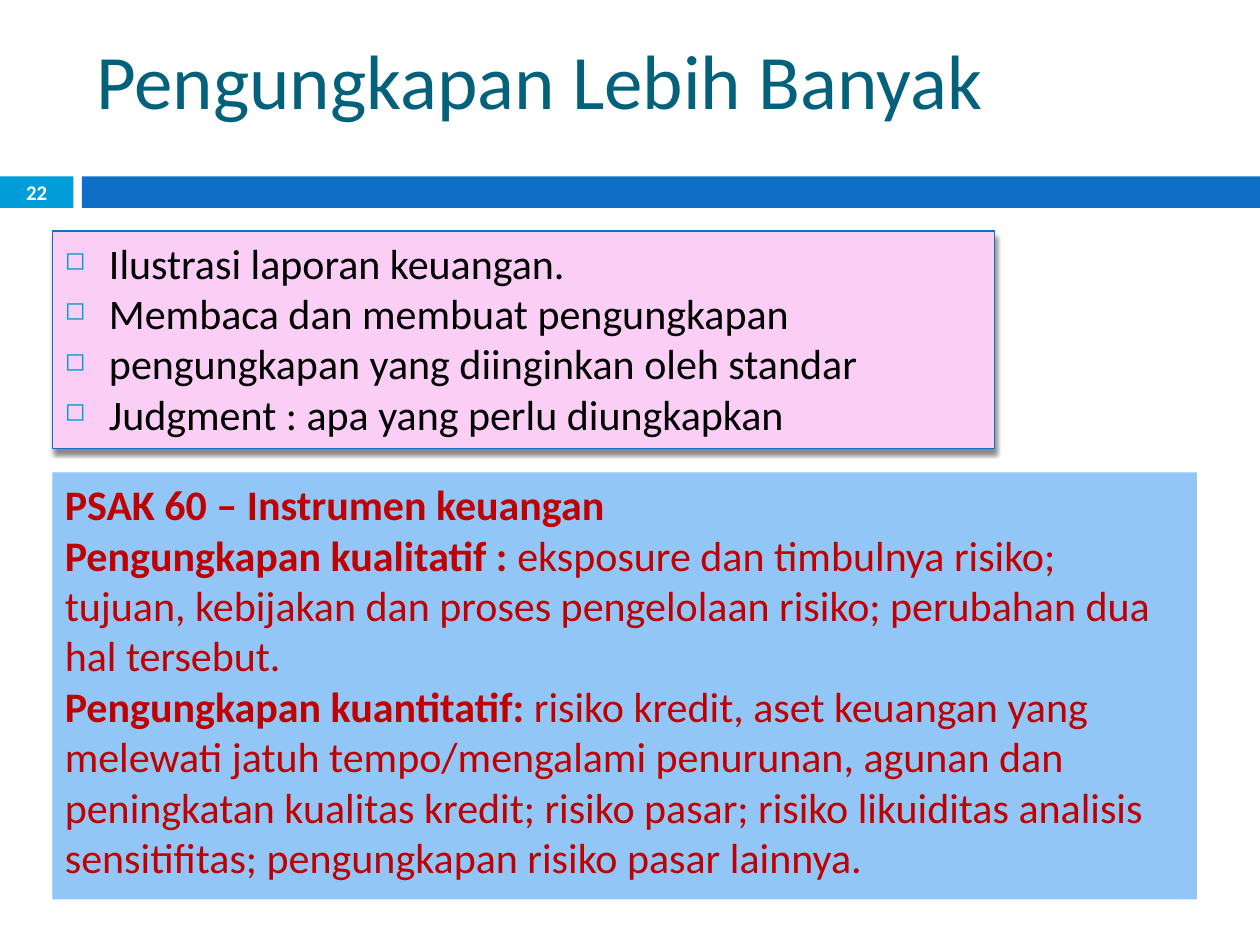
import lxml.etree
import pptx
import pptx.dml.color
import pptx.enum.shapes
import pptx.enum.text
import pptx.oxml.ns
import pptx.util

Pt = pptx.util.Pt
RGBColor = pptx.dml.color.RGBColor
ALIGN = pptx.enum.text.PP_ALIGN
ANCHOR = pptx.enum.text.MSO_ANCHOR
qn = pptx.oxml.ns.qn

CYAN = RGBColor(0x00, 0x9D, 0xD9)
BLUE = RGBColor(0x0F, 0x6F, 0xC6)
TEAL = RGBColor(0x04, 0x61, 0x7B)
PINK = RGBColor(0xFA, 0xCE, 0xF5)
LIGHT_BLUE = RGBColor(0x91, 0xC6, 0xF7)
DARK_RED = RGBColor(0xC0, 0x00, 0x00)
BLACK = RGBColor(0x00, 0x00, 0x00)
WHITE = RGBColor(0xFF, 0xFF, 0xFF)

REQUIREMENTS = [
    "Ilustrasi laporan keuangan.",
    "Membaca dan membuat pengungkapan",
    "pengungkapan yang diinginkan oleh standar",
    "Judgment : apa yang perlu diungkapkan",
]
# Bold lead, then regular text
STANDARD = [
    ("PSAK 60 – Instrumen keuangan", ""),
    ("Pengungkapan kualitatif : ",
     "eksposure dan timbulnya risiko; tujuan, kebijakan dan proses "
     "pengelolaan risiko; perubahan dua hal tersebut."),
    ("Pengungkapan kuantitatif: ",
     "risiko kredit, aset keuangan yang melewati jatuh tempo/mengalami "
     "penurunan, agunan dan peningkatan kualitas kredit; risiko pasar; "
     "risiko likuiditas analisis sensitifitas; pengungkapan risiko pasar lainnya."),
]

deck = pptx.Presentation()
deck.slide_width, deck.slide_height = Pt(720), Pt(540)
slide = deck.slides.add_slide(deck.slide_layouts[6])


def add_box(left, top, width, height, fill=None, anchor=ANCHOR.TOP):
    """Add a rectangle with wrapped text and no outline; no fill means clear."""
    box = slide.shapes.add_shape(
        pptx.enum.shapes.MSO_SHAPE.RECTANGLE,
        Pt(left), Pt(top), Pt(width), Pt(height))
    box.shadow.inherit = False
    box.line.fill.background()
    if fill is None:
        box.fill.background()
    else:
        box.fill.solid()
        box.fill.fore_color.rgb = fill
    box.text_frame.word_wrap = True
    box.text_frame.vertical_anchor = anchor
    return box


def style(paragraph, size, color, bold=None, align=ALIGN.LEFT):
    paragraph.alignment = align
    paragraph.font.name = "Calibri"
    paragraph.font.size = Pt(size)
    paragraph.font.color.rgb = color
    paragraph.font.bold = bold


# Header band
add_box(0, 100.8, 42, 18, CYAN)
add_box(46.8, 100.8, 673.2, 18, BLUE)

title = add_box(48, 6, 642, 78, anchor=ANCHOR.MIDDLE).text_frame.paragraphs[0]
title.text = "Pengungkapan Lebih Banyak"
style(title, 44, TEAL)

page_number = add_box(0, 100, 42, 19.5, anchor=ANCHOR.MIDDLE).text_frame.paragraphs[0]
page_number.text = "22"
style(page_number, 11.9, WHITE, bold=True, align=ALIGN.CENTER)

# Disclosure requirements
requirements = add_box(30, 132, 538.5, 124.5, PINK)
requirements.line.color.rgb = BLUE
requirements.line.width = Pt(0.79)
effects = requirements._element.spPr.find(qn("a:effectLst"))
shadow = lxml.etree.SubElement(
    effects, qn("a:outerShdw"), blurRad=str(Pt(3)), dist=str(Pt(2.4)),
    dir="5400000", algn="ctr", rotWithShape="0")
shadow_color = lxml.etree.SubElement(shadow, qn("a:srgbClr"), val=str(BLACK))
lxml.etree.SubElement(shadow_color, qn("a:alpha"), val="45000")

requirements.text_frame.text = "\n".join(REQUIREMENTS)
for item in requirements.text_frame.paragraphs:
    properties = item._p.get_or_add_pPr()
    properties.set("marL", str(Pt(25.2)))
    properties.set("indent", str(Pt(-25.2)))
    bullet_color = lxml.etree.SubElement(properties, qn("a:buClr"))
    lxml.etree.SubElement(bullet_color, qn("a:srgbClr"), val=str(CYAN))
    lxml.etree.SubElement(properties, qn("a:buSzPct"), val="60000")
    lxml.etree.SubElement(properties, qn("a:buChar"), char="◻")
    style(item, 24, BLACK)

# Disclosures under the standard
standard = add_box(30, 270, 654, 244, LIGHT_BLUE).text_frame
for index, (lead, detail) in enumerate(STANDARD):
    paragraph = standard.add_paragraph() if index else standard.paragraphs[0]
    style(paragraph, 24, DARK_RED)
    lead_run = paragraph.add_run()
    lead_run.text = lead
    lead_run.font.bold = True
    if detail:
        paragraph.add_run().text = detail

deck.save("out.pptx")
